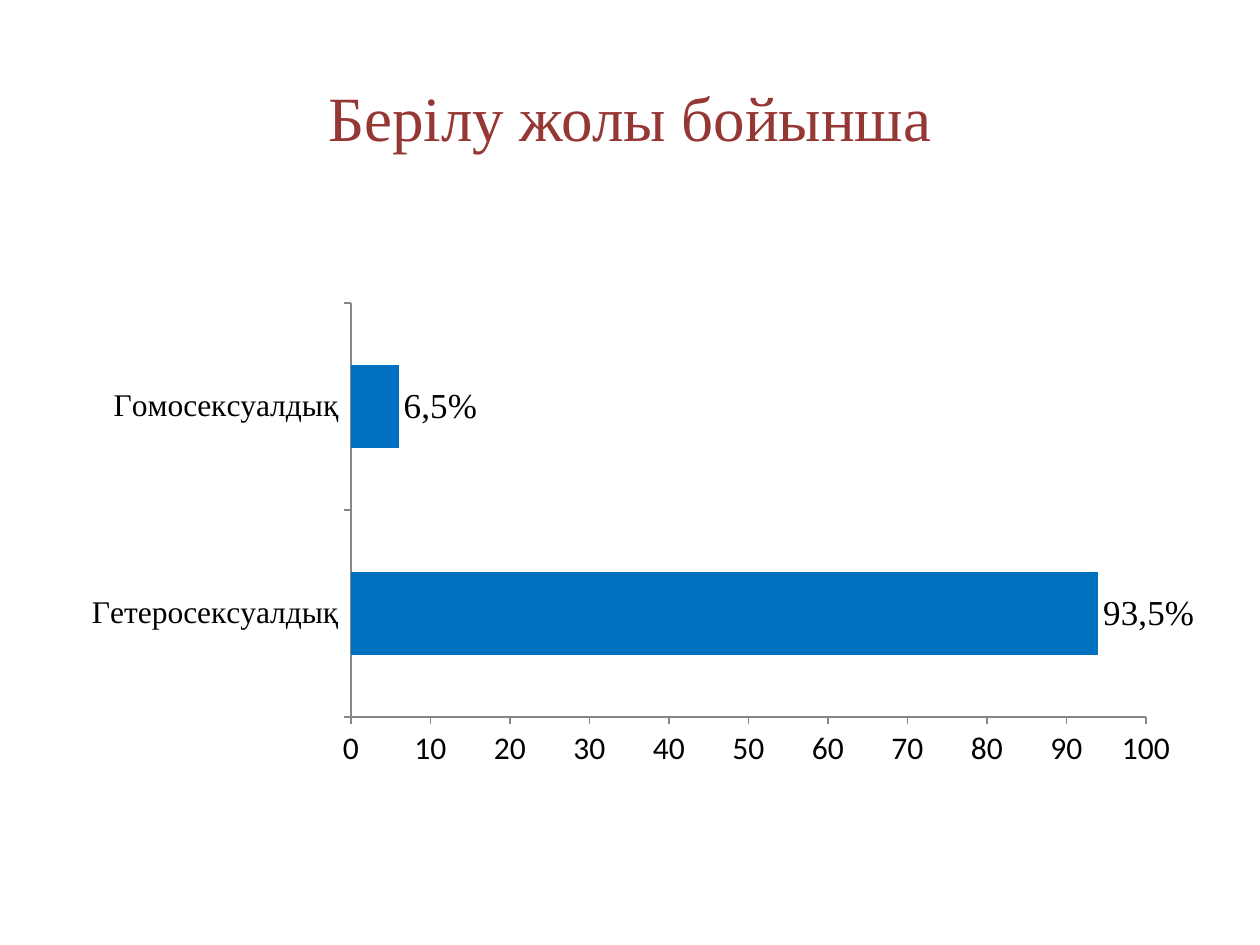
from pptx import Presentation
from pptx.chart.data import CategoryChartData
from pptx.dml.color import RGBColor
from pptx.enum.chart import XL_CHART_TYPE, XL_LABEL_POSITION, XL_TICK_MARK
from pptx.enum.text import MSO_ANCHOR, PP_ALIGN
from pptx.oxml import parse_xml
from pptx.oxml.ns import nsdecls, qn
from pptx.util import Pt

BAR = XL_CHART_TYPE.BAR_CLUSTERED
OUTSIDE_END = XL_LABEL_POSITION.OUTSIDE_END
TICK_OUTSIDE = XL_TICK_MARK.OUTSIDE
MIDDLE = MSO_ANCHOR.MIDDLE
CENTER = PP_ALIGN.CENTER

PX = 914400 / 126
SERIF, SANS = "Times New Roman", "Calibri"
COLORS = {"title": "953735", "text": "000000", "bar": "0070C0", "axis": "868686"}
ROUTES = [("Гетеросексуалдық", 94, "93,5%"), ("Гомосексуалдық", 6, "6,5%")]


class SlideBuilder:
    """Holds the style and the current slide, and adds its elements."""

    def __init__(self, slide):
        self.slide = slide

    def place(self, *lengths):
        return [round(length * PX) for length in lengths]

    def style(self, font, size, face, color="text"):
        font.size = Pt(size)
        font.name = face
        font.bold = False
        font.color.rgb = RGBColor.from_string(COLORS[color])

    def title(self, text, *bounds):
        box = self.slide.shapes.add_textbox(*self.place(*bounds))
        frame = box.text_frame
        frame.word_wrap = True
        frame.vertical_anchor = MIDDLE
        para = frame.paragraphs[0]
        para.alignment = CENTER
        span = para.add_run()
        span.text = text
        self.style(span.font, 36, SERIF, "title")

    def axis(self, axis, face):
        axis.has_major_gridlines = False
        axis.major_tick_mark = TICK_OUTSIDE
        axis.format.line.color.rgb = RGBColor.from_string(COLORS["axis"])
        axis.format.line.width = Pt(0.75)
        self.style(axis.tick_labels.font, 18, face)

    def plot_area(self, chart, bounds, inner):
        area = chart.element.find(".//" + qn("c:plotArea"))
        for layout in area.findall(qn("c:layout")):
            area.remove(layout)
        width, height = bounds[2:]
        parts = "".join(
            f'<c:{key} val="{length / whole}"/>'
            for key, length, whole in zip("xywh", inner, (width, height) * 2))
        area.insert(0, parse_xml(
            f'<c:layout {nsdecls("c")}><c:manualLayout><c:layoutTarget val="inner"/>'
            f'<c:xMode val="edge"/><c:yMode val="edge"/>{parts}'
            "</c:manualLayout></c:layout>"))

    def bar_chart(self, rows, bounds, inner):
        names, values, labels = zip(*rows)
        data = CategoryChartData()
        data.categories = names
        data.add_series("Series 1", values)
        chart = self.slide.shapes.add_chart(BAR, *self.place(*bounds), data).chart
        chart.has_legend = False
        chart.has_title = False
        self.style(chart.font, 18, SANS)
        self.axis(chart.category_axis, SERIF)
        self.axis(chart.value_axis, SANS)
        chart.value_axis.minimum_scale = 0
        chart.value_axis.maximum_scale = 100
        chart.value_axis.major_unit = 10
        plot = chart.plots[0]
        plot.vary_by_categories = False
        plot.gap_width = 150
        series = plot.series[0]
        series.format.fill.solid()
        series.format.fill.fore_color.rgb = RGBColor.from_string(COLORS["bar"])
        for index, text in enumerate(labels):
            label = series.points[index].data_label
            span = label.text_frame.paragraphs[0].add_run()
            span.text = text
            self.style(span.font, 20, SERIF)
            label.position = OUTSIDE_END
        self.plot_area(chart, bounds, inner)


def main():
    deck = Presentation()
    deck.slide_width, deck.slide_height = round(1260 * PX), round(945 * PX)
    page = SlideBuilder(deck.slides.add_slide(deck.slide_layouts[6]))
    page.title("Берілу жолы бойынша", 63, 37, 1134, 158)
    page.bar_chart(ROUTES, (63, 220, 1134, 624), (288, 83, 795, 414))
    deck.save("out.pptx")


if __name__ == "__main__":
    main()
